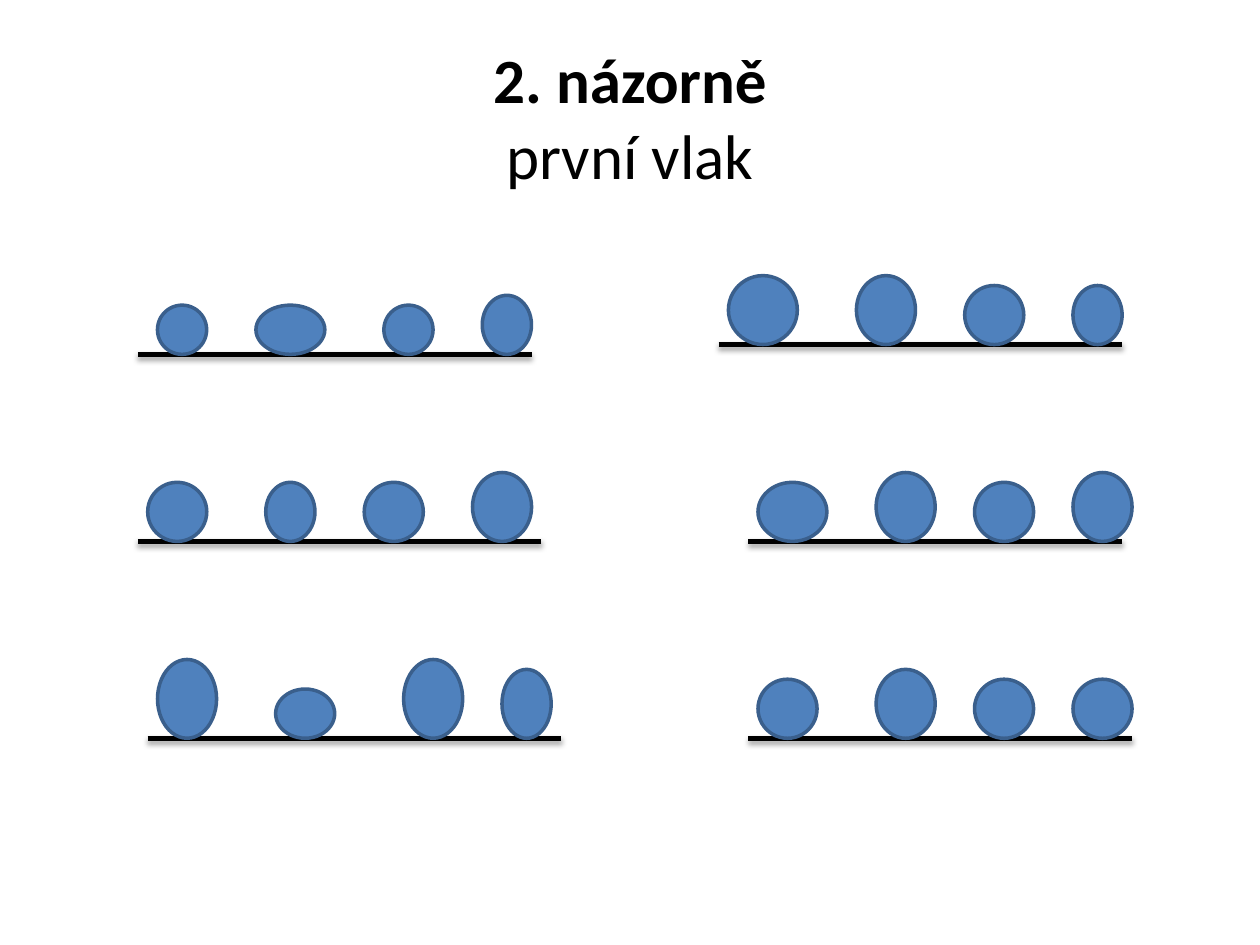
import pptx
import pptx.util
import pptx.dml.color
import pptx.enum.shapes
import pptx.enum.text
import pptx.oxml
import pptx.oxml.ns
from dataclasses import dataclass

TITLE = ("2. názorně", "první vlak")

# baseline, (start, end), wheels as (left, width, height)
TRAINS = [
    (360, (140, 540), [(160, 50, 50), (260, 70, 50), (390, 50, 50), (490, 50, 60)]),
    (550, (140, 550), [(150, 60, 60), (270, 50, 60), (370, 60, 60), (480, 60, 70)]),
    (750, (150, 570), [(160, 60, 80), (280, 60, 50), (410, 60, 80), (510, 50, 70)]),
    (350, (730, 1140), [(740, 70, 70), (870, 60, 70), (980, 60, 60), (1090, 50, 60)]),
    (550, (760, 1140), [(770, 70, 60), (890, 60, 70), (990, 60, 60), (1090, 60, 70)]),
    (750, (760, 1150), [(770, 60, 60), (890, 60, 70), (990, 60, 60), (1090, 60, 60)]),
]


@dataclass
class Theme:
    font: str = "Calibri"
    title_size: int = 36
    ink: str = "000000"
    wheel: str = "4F81BD"
    rim: str = "3A5F8C"
    track_width: int = 3
    rim_width: int = 2


THEME = Theme()
EMU_PER_PX = 914400 / 128
SHADOW = (
    f'<a:effectLst {pptx.oxml.ns.nsdecls("a")}>'
    '<a:outerShdw blurRad="39370" dist="22860" dir="5400000" rotWithShape="0">'
    f'<a:srgbClr val="{THEME.ink}"><a:alpha val="35000"/></a:srgbClr>'
    '</a:outerShdw></a:effectLst>'
)


def px(*values):
    return [pptx.util.Emu(round(v * EMU_PER_PX)) for v in values]


def rgb(value):
    return pptx.dml.color.RGBColor.from_string(value)


def set_line(shape, color, width):
    shape.line.color.rgb = rgb(color)
    shape.line.width = pptx.util.Pt(width)


def add_title(s):
    sp = s.shapes.title
    sp.left, sp.top, sp.width, sp.height = px(64, 38, 1152, 160)
    tf = sp.text_frame
    tf.vertical_anchor = pptx.enum.text.MSO_ANCHOR.MIDDLE
    p = tf.paragraphs[0]
    p.alignment = pptx.enum.text.PP_ALIGN.CENTER
    p.font.name = THEME.font
    p.font.size = pptx.util.Pt(THEME.title_size)
    p.font.color.rgb = rgb(THEME.ink)
    for i, text in enumerate(TITLE):
        if i:
            p.add_line_break()
        r = p.add_run()
        r.text = text
        r.font.bold = i == 0
        r.font.name = THEME.font
        r.font.size = pptx.util.Pt(THEME.title_size)


def add_track(s, base, start, end):
    line = s.shapes.add_connector(
        pptx.enum.shapes.MSO_CONNECTOR.STRAIGHT, *px(start, base, end, base))
    set_line(line, THEME.ink, THEME.track_width)
    line._element.spPr.append(pptx.oxml.parse_xml(SHADOW))


def add_wheel(s, base, left, width, height):
    sp = s.shapes.add_shape(
        pptx.enum.shapes.MSO_SHAPE.OVAL, *px(left, base - height, width, height))
    sp.shadow.inherit = False
    sp.fill.solid()
    sp.fill.fore_color.rgb = rgb(THEME.wheel)
    set_line(sp, THEME.rim, THEME.rim_width)


def main():
    prs = pptx.Presentation()
    prs.slide_width, prs.slide_height = px(1280, 960)
    s = prs.slides.add_slide(prs.slide_layouts[5])
    add_title(s)
    for base, ends, _ in TRAINS:
        add_track(s, base, *ends)
    for base, _, wheels in TRAINS:
        for wheel in wheels:
            add_wheel(s, base, *wheel)
    prs.save("out.pptx")


if __name__ == "__main__":
    main()
